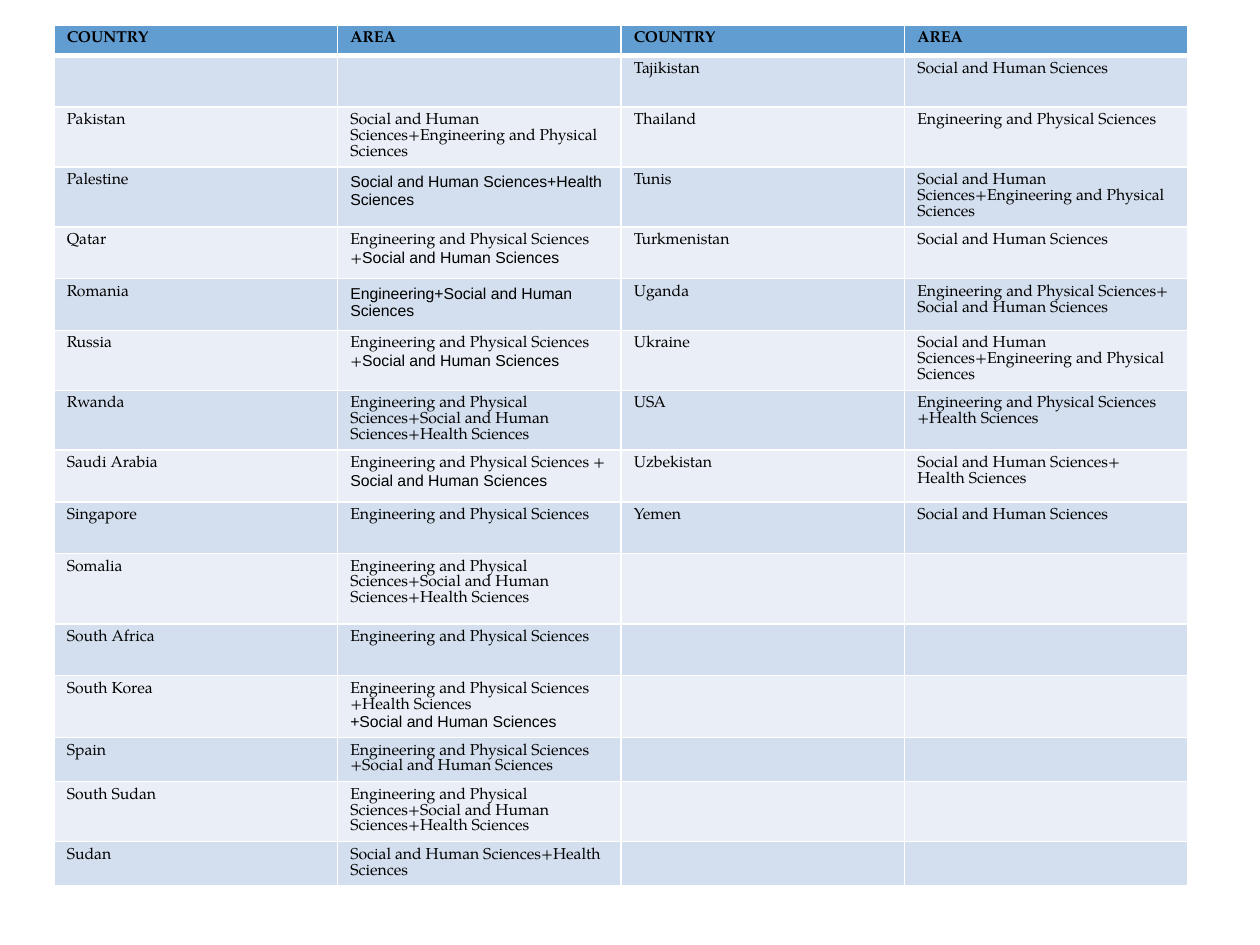
from lxml import etree
from pptx import Presentation
from pptx import util as u
from pptx.dml.color import RGBColor
from pptx.oxml.ns import qn

SERIF, SANS = "TeX Gyre Pagella", "Arial"
SIZE = 9
HEADER_FILL, BANDS = "629DD1", ("D3DFEE", "EAEFF7")
COLUMNS = 4

SOCIAL = "Social and Human Sciences"
ENGINEERING = "Engineering and Physical Sciences"
HEALTH = "Health Sciences"
SOCIAL_ENGINEERING = f"{SOCIAL}+{ENGINEERING}"
ALL_AREAS = f"{ENGINEERING}+{SOCIAL}+{HEALTH}"

# In an area, "|" switches between the serif and the sans font.
LEFT_COUNTRIES = [
    ("", ""),
    ("Pakistan", SOCIAL_ENGINEERING),
    ("Palestine", f"|{SOCIAL}+{HEALTH}"),
    ("Qatar", f"{ENGINEERING} +|{SOCIAL}"),
    ("Romania", f"|Engineering+{SOCIAL}"),
    ("Russia", f"{ENGINEERING} +|{SOCIAL}"),
    ("Rwanda", ALL_AREAS),
    ("Saudi Arabia", f"{ENGINEERING} + |{SOCIAL}"),
    ("Singapore", ENGINEERING),
    ("Somalia", ALL_AREAS),
    ("South Africa", ENGINEERING),
    ("South Korea", f"{ENGINEERING} +{HEALTH}\n|+{SOCIAL}"),
    ("Spain", f"{ENGINEERING} +{SOCIAL}"),
    ("South Sudan", ALL_AREAS),
    ("Sudan", f"{SOCIAL}+{HEALTH}"),
]
RIGHT_COUNTRIES = [
    ("Tajikistan", SOCIAL),
    ("Thailand", ENGINEERING),
    ("Tunis", SOCIAL_ENGINEERING),
    ("Turkmenistan", SOCIAL),
    ("Uganda", f"{ENGINEERING}+ {SOCIAL}"),
    ("Ukraine", SOCIAL_ENGINEERING),
    ("USA", f"{ENGINEERING} +{HEALTH}"),
    ("Uzbekistan", f"{SOCIAL}+\n{HEALTH}"),
    ("Yemen", SOCIAL),
]
# Minimum heights; rows grow to fit their text.
ROW_HEIGHTS = [0.24] + [0.41] * 9 + [0.56, 0.41] + [0.14] * 4


def color(value):
    return RGBColor.from_string(value)


def write(frame, content, size=SIZE, bold=False, ink="000000"):
    for index, line in enumerate(content.split("\n")):
        paragraph = frame.paragraphs[0] if index == 0 else frame.add_paragraph()
        for part, words in enumerate(line.split("|")):
            if words:
                run = paragraph.add_run()
                run.text = words
                run.font.name = SANS if part % 2 else SERIF
                run.font.size = u.Pt(size)
                run.font.bold = bold
                run.font.color.rgb = color(ink)
        if not line:
            # Keeps an empty cell as low as its neighbours
            etree.SubElement(paragraph._p, qn("a:endParaRPr"), sz=str(size * 100))


def border(cell, bottom=1, ink="FFFFFF"):
    properties = cell._tc.get_or_add_tcPr()
    for side, width in (("L", 1), ("R", 1), ("T", 1), ("B", bottom)):
        line = etree.SubElement(properties, qn(f"a:ln{side}"), w=str(u.Pt(width)))
        fill = etree.SubElement(line, qn("a:solidFill"))
        etree.SubElement(fill, qn("a:srgbClr"), val=ink)


def country_table(slide, left, top, width):
    blanks = [("", "")] * (len(LEFT_COUNTRIES) - len(RIGHT_COUNTRIES))
    rows = [("COUNTRY", "AREA") * 2]
    rows += [a + b for a, b in zip(LEFT_COUNTRIES, RIGHT_COUNTRIES + blanks)]
    table = slide.shapes.add_table(
        len(rows), COLUMNS, u.Inches(left), u.Inches(top),
        u.Inches(width), u.Inches(sum(ROW_HEIGHTS))).table
    for column in table.columns:
        column.width = u.Inches(width / COLUMNS)
    for r, (entries, height) in enumerate(zip(rows, ROW_HEIGHTS)):
        table.rows[r].height = u.Inches(height)
        header = r == 0
        for c, entry in enumerate(entries):
            cell = table.cell(r, c)
            write(cell.text_frame, entry, bold=header)
            border(cell, bottom=3 if header else 1)
            cell.fill.solid()
            cell.fill.fore_color.rgb = color(HEADER_FILL if header else BANDS[(r - 1) % 2])


def main():
    deck = Presentation()
    deck.slide_width, deck.slide_height = u.Inches(10), u.Inches(7.5)
    slide = deck.slides.add_slide(deck.slide_layouts[6])
    country_table(slide, left=0.43, top=0.2, width=9)
    deck.save("out.pptx")


if __name__ == "__main__":
    main()
